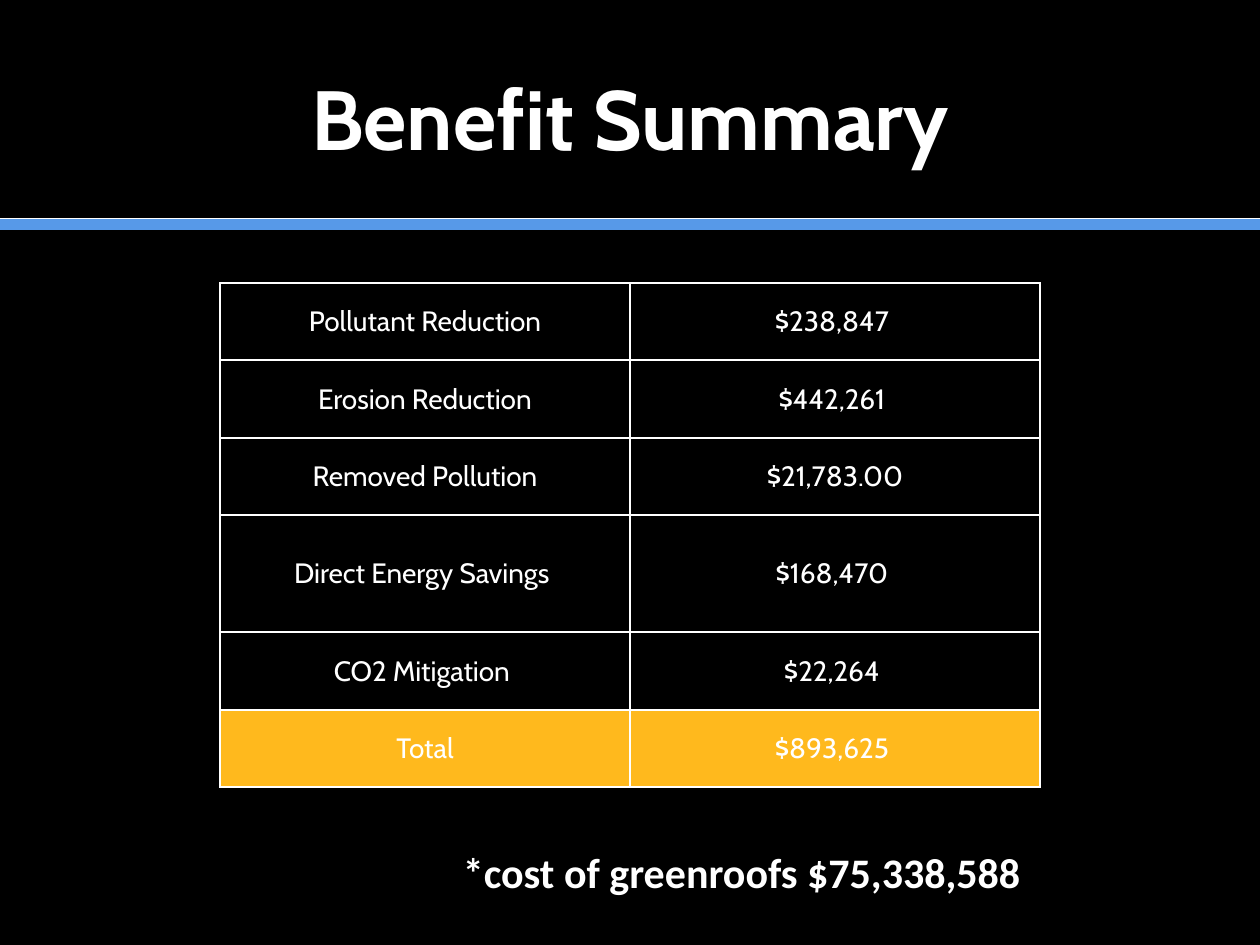
"""Builds the Benefit Summary slide."""
from lxml import etree
from pptx import Presentation, util as u
from pptx.dml.color import RGBColor
from pptx.enum import shapes, text
from pptx.oxml import ns

WHITE, BLACK, BLUE, GOLD = "FFFFFF", "000000", "5799E8", "FFB91D"
SIZE = (1260, 945)
TITLE = ("Benefit Summary", (63, 38, 1134, 157))
FOOTNOTE = (" *cost of greenroofs $75,338,588", (441, 840, 598, 115))
RULES = [(224, BLUE, 7), (218, WHITE, 0.5)]
TABLE_BOX = (220, 283, 820, 504)
BENEFITS = [
    ("Pollutant Reduction", "$238,847 ", 77),
    ("Erosion Reduction", "$442,261 ", 78),
    ("Removed Pollution", " $21,783.00 ", 77),
    ("Direct Energy Savings ", "$168,470 ", 117),
    ("CO2 Mitigation ", "$22,264 ", 78),
    ("Total", "$893,625 ", 77),
]


def px(value):
    return u.Emu(round(value * 914400 / 126))


def color(value):
    return RGBColor.from_string(value)


def write(frame, words, size, font, bold=False, align=text.PP_ALIGN.CENTER):
    paragraph = frame.paragraphs[0]
    paragraph.alignment = align
    run = paragraph.add_run()
    run.text = words
    run.font.size, run.font.name, run.font.bold = u.Pt(size), font, bold
    run.font.color.rgb = color(WHITE)


def add_text_box(slide, box):
    return slide.shapes.add_textbox(*map(px, box)).text_frame


def add_rule(slide, y, line_color, width):
    rule = slide.shapes.add_connector(
        shapes.MSO_CONNECTOR.STRAIGHT, 0, px(y), px(SIZE[0]), px(y))
    rule.line.color.rgb, rule.line.width = color(line_color), u.Pt(width)
    etree.SubElement(rule.element.spPr, ns.qn("a:effectLst"))


def add_borders(cell):
    properties = cell._tc.get_or_add_tcPr()
    for side in ("lnL", "lnR", "lnT", "lnB"):
        line = etree.SubElement(properties, ns.qn("a:" + side), w=str(u.Pt(1)))
        fill = etree.SubElement(line, ns.qn("a:solidFill"))
        etree.SubElement(fill, ns.qn("a:srgbClr"), val=WHITE)


def style_cell(cell, words, is_total):
    cell.margin_left = cell.margin_right = cell.margin_top = px(1)
    cell.margin_bottom = 0
    cell.vertical_anchor = text.MSO_ANCHOR.MIDDLE
    add_borders(cell)
    if is_total:
        cell.fill.solid()
        cell.fill.fore_color.rgb = color(GOLD)
    else:
        cell.fill.background()
    write(cell.text_frame, words, 16, "Cabin")


def add_benefit_table(slide):
    table = slide.shapes.add_table(len(BENEFITS), 2, *map(px, TABLE_BOX)).table
    table.first_row = table.horz_banding = False
    for row, (*cells, height) in enumerate(BENEFITS):
        table.rows[row].height = px(height)
        for column, words in enumerate(cells):
            style_cell(table.cell(row, column), words, row == len(BENEFITS) - 1)


def main():
    presentation = Presentation()
    presentation.slide_width, presentation.slide_height = map(px, SIZE)
    slide = presentation.slides.add_slide(presentation.slide_layouts[6])
    slide.background.fill.solid()
    slide.background.fill.fore_color.rgb = color(BLACK)

    for rule in RULES:
        add_rule(slide, *rule)

    title = add_text_box(slide, TITLE[1])
    title.word_wrap = True
    title.vertical_anchor = text.MSO_ANCHOR.MIDDLE
    write(title, TITLE[0], 48, "Cabin", bold=True)

    add_benefit_table(slide)

    footnote = add_text_box(slide, FOOTNOTE[1])
    footnote.word_wrap = True
    write(footnote, FOOTNOTE[0], 24, "Calibri", bold=True, align=text.PP_ALIGN.LEFT)
    presentation.save("out.pptx")


if __name__ == "__main__":
    main()
